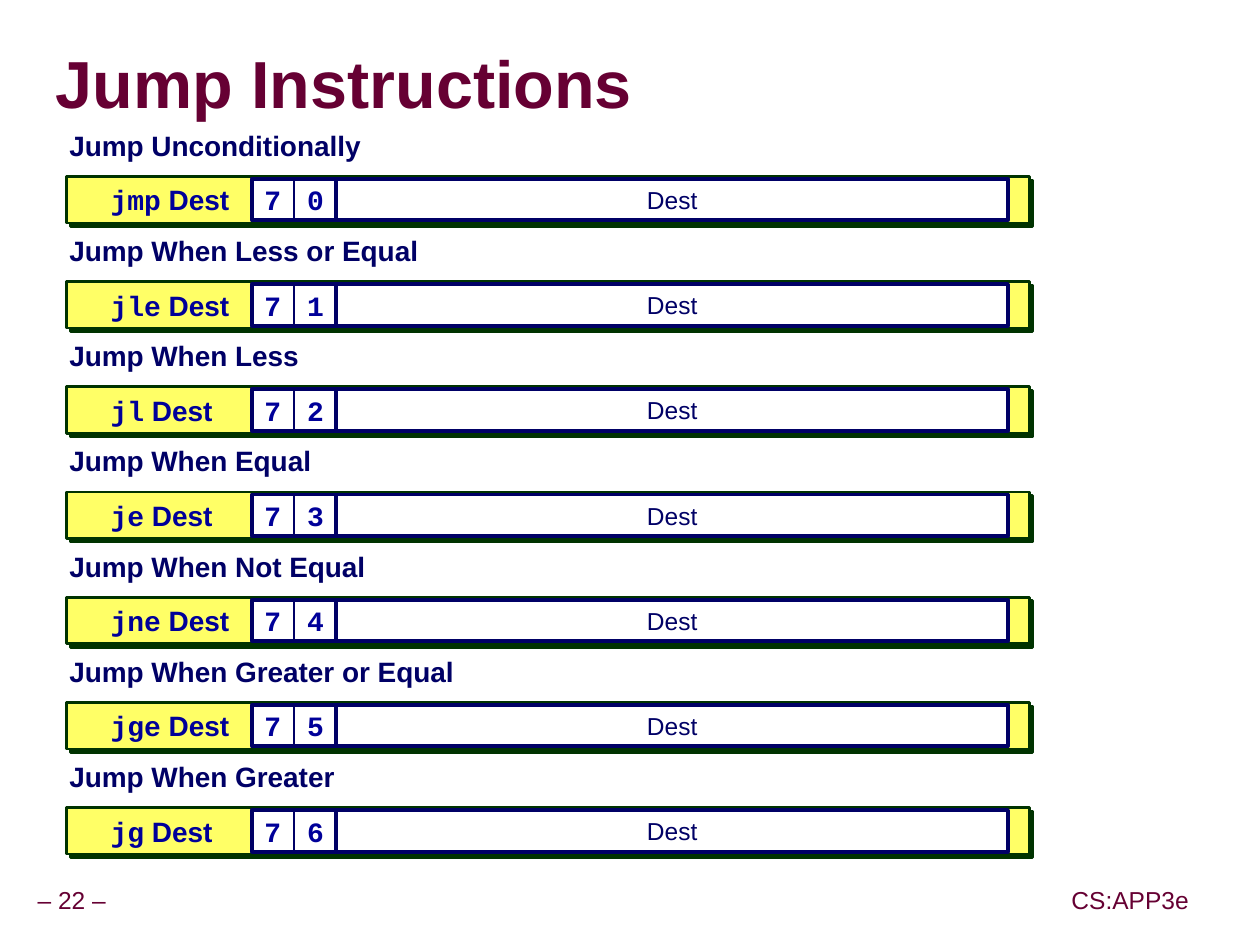
from lxml import etree
from pptx import Presentation
from pptx.dml.color import RGBColor
from pptx.enum import shapes, text
from pptx.oxml import ns
from pptx.util import Inches, Pt

MAROON, NAVY, BLUE = "660033", "000066", "000099"
YELLOW, GREEN, WHITE, GRAY = "FFFF66", "003300", "FFFFFF", "969696"
SANS, MONO = "Arial", "Courier New"

# heading, heading width, mnemonic; the function code is the row number
JUMPS = [
    ("Jump Unconditionally", 2.45, "jmp"),
    ("Jump When Less or Equal", 2.88, "jle"),
    ("Jump When Less", 1.93, "jl"),
    ("Jump When Equal", 2.03, "je"),
    ("Jump When Not Equal", 2.49, "jne"),
    ("Jump When Greater or Equal", 3.17, "jge"),
    ("Jump When Greater", 2.22, "jg"),
]
ROW_LEFT, ROW_TOP, ROW_PITCH = 0.5, 1, 0.835
CELL = 0.33


def color(value):
    return RGBColor.from_string(value)


def add_shadow(properties, value, distance):
    """Append a hard shadow, cast down and to the right, to a properties element."""
    effects = properties.find(ns.qn("a:effectLst"))
    if effects is None:
        effects = etree.SubElement(properties, ns.qn("a:effectLst"))
    shadow = etree.SubElement(effects, ns.qn("a:outerShdw"),
                              dist=str(Pt(distance)), dir="2700000", algn="ctr", rotWithShape="0")
    etree.SubElement(shadow, ns.qn("a:srgbClr"), val=value)


def write(shape, parts, size, value, bold=False, align=text.PP_ALIGN.LEFT,
          anchor=text.MSO_ANCHOR.MIDDLE, spacing=None, inset=None):
    """Fill a shape with one unwrapped line made of (string, font name) parts."""
    frame = shape.text_frame
    frame.word_wrap = False
    frame.vertical_anchor = anchor
    if inset is not None:
        frame.margin_left = frame.margin_right = Inches(inset)
        frame.margin_top = frame.margin_bottom = Inches(inset)
    paragraph = frame.paragraphs[0]
    paragraph.alignment = align
    paragraph.line_spacing = spacing
    font = paragraph.font
    font.size, font.bold, font.name = Pt(size), bold, parts[0][1]
    font.color.rgb = color(value)
    for string, name in parts:
        run = paragraph.add_run()
        run.text = string
        if len(parts) > 1:
            run.font.name = name


def add_text(owner, left, top, width, height, parts, size, value, **options):
    box = owner.add_textbox(Inches(left), Inches(top), Inches(width), Inches(height))
    write(box, parts, size, value, **options)
    return box


def add_box(owner, left, top, width, height, fill, line, weight):
    box = owner.add_shape(shapes.MSO_SHAPE.RECTANGLE, Inches(left), Inches(top),
                          Inches(width), Inches(height))
    box.shadow.inherit = False
    if fill:
        box.fill.solid()
        box.fill.fore_color.rgb = color(fill)
    else:
        box.fill.background()
    box.line.color.rgb = color(line)
    box.line.width = Pt(weight)
    return box


def add_title(slide, left, top, width, height):
    title = slide.shapes.title
    title.left, title.top = Inches(left), Inches(top)
    title.width, title.height = Inches(width), Inches(height)
    write(title, [("Jump Instructions", SANS)], 38, MAROON, bold=True, spacing=0.87, inset=0)
    title.text_frame.word_wrap = True
    run = title.text_frame.paragraphs[0].runs[0]
    add_shadow(run.font._element, GRAY, 2.8)


def add_opcode(slide, left, top, digits):
    """Group the half-byte cells of the opcode under one heavy outline."""
    group = slide.shapes.add_group_shape().shapes
    for index, digit in enumerate(digits):
        cell = add_box(group, left + index * (CELL + 0.01), top, CELL, CELL, WHITE, NAVY, 0.5)
        write(cell, [(digit, MONO)], 16, BLUE, bold=True, align=text.PP_ALIGN.CENTER)
    add_box(group, left, top, 0.67, CELL, None, NAVY, 2.25)


def add_jump(slide, left, top, heading, heading_width, mnemonic, code):
    bar = add_box(slide.shapes, left + 0.03, top + 0.4, 7.64, 0.37, YELLOW, GREEN, 1.5)
    add_shadow(bar._element.spPr, GREEN, 2.8)
    field_top = top + 0.42
    add_text(slide.shapes, left + 0.28, field_top, 1.22, CELL,
             [(mnemonic, MONO), (" Dest", SANS)], 16, BLUE, bold=True)
    add_opcode(slide, left + 1.5, field_top, f"7{code}")
    label = add_text(slide.shapes, left, top, heading_width, 0.34, [(heading, SANS)], 16, NAVY,
                     bold=True, anchor=text.MSO_ANCHOR.TOP, spacing=0.9, inset=0.05)
    label.text_frame.auto_size = text.MSO_AUTO_SIZE.SHAPE_TO_FIT_TEXT
    target = add_box(slide.shapes, left + 2.17, field_top, 5.33, CELL, WHITE, NAVY, 2.25)
    write(target, [("Dest", SANS)], 14, NAVY, align=text.PP_ALIGN.CENTER)


def add_footer(slide, top):
    for left, width, string in ((0.24, 0.66, "– 22 –"), (8.45, 1.04, "CS:APP3e")):
        box = add_text(slide.shapes, left, top, width, 0.31, [(string, SANS)], 14, MAROON,
                       align=text.PP_ALIGN.CENTER, spacing=0.9, inset=0.05)
        box.text_frame.auto_size = text.MSO_AUTO_SIZE.SHAPE_TO_FIT_TEXT


def main():
    presentation = Presentation()
    presentation.slide_width, presentation.slide_height = Inches(10), Inches(7.5)
    slide = presentation.slides.add_slide(presentation.slide_layouts[5])
    add_footer(slide, 7)
    add_title(slide, 0.44, 0.27, 9.53, 0.85)
    for code, jump in enumerate(JUMPS):
        add_jump(slide, ROW_LEFT, ROW_TOP + code * ROW_PITCH, *jump, code)
    presentation.save("out.pptx")


if __name__ == "__main__":
    main()
